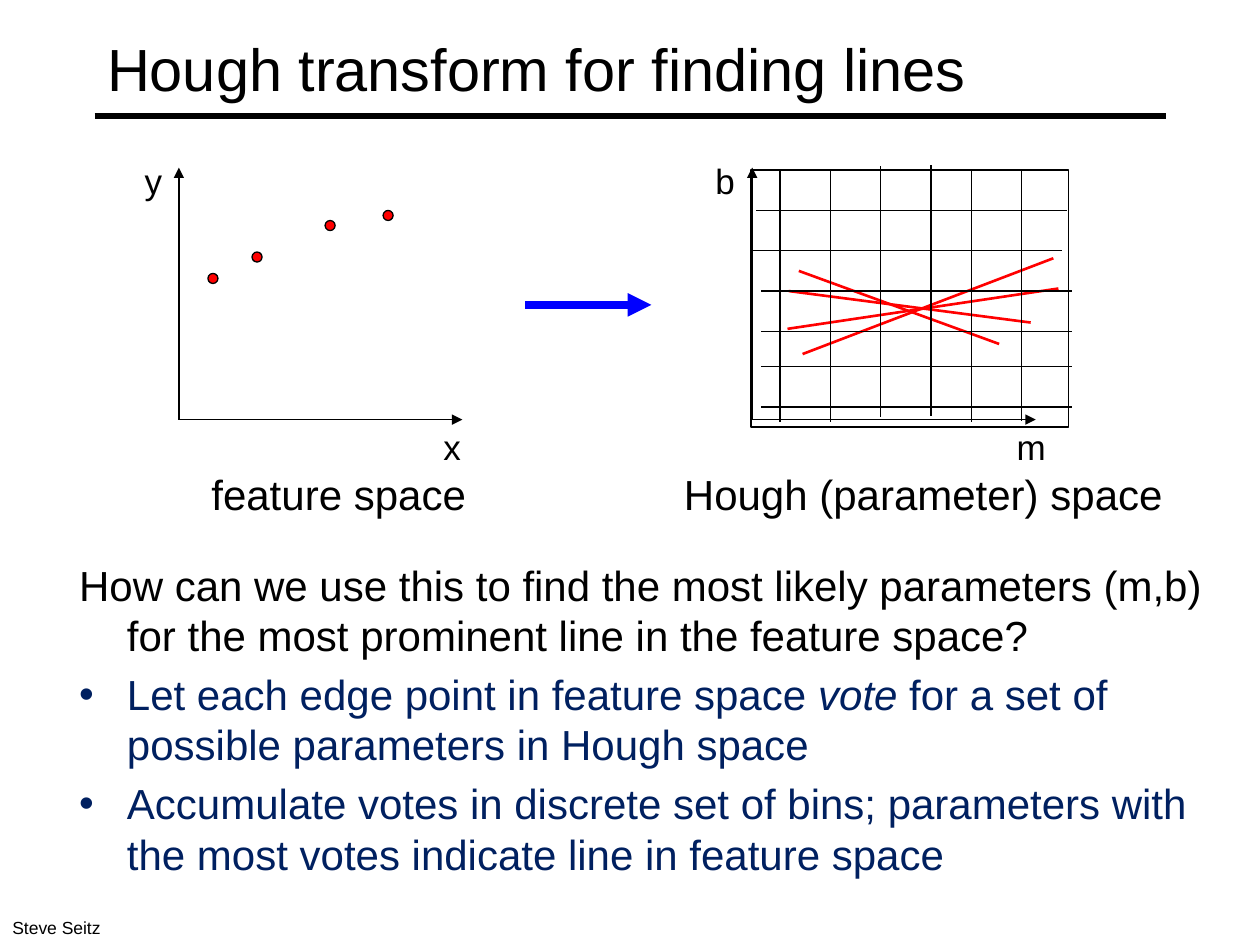
from lxml import etree
from pptx import Presentation
from pptx.dml.color import RGBColor
from pptx.enum import shapes, text
from pptx.oxml.ns import qn
from pptx.util import Inches, Pt

BLACK = RGBColor(0x00, 0x00, 0x00)
RED = RGBColor(0xFF, 0x00, 0x00)
BLUE = RGBColor(0x00, 0x00, 0xFF)
NAVY = RGBColor(0x00, 0x20, 0x60)
FONT = "Arial"

EDGE_POINTS = [(0.23, 0.84), (0.58, 0.67), (1.16, 0.42), (1.62, 0.34)]
VOTE_LINES = [
    (0.37, 0.82, 1.96, 1.4),
    (0.29, 0.98, 2.21, 1.23),
    (0.4, 1.48, 2.39, 0.72),
    (0.28, 1.28, 2.43, 0.96),
]
GRID_ROWS = [(0.04, 0.32), (0, 0.64), (0.08, 0.96), (0.08, 1.28), (0.08, 1.56), (0.08, 1.88)]
GRID_COLUMNS = [(0.23, 0.01), (0.63, 0.01), (1.03, -0.03), (1.43, -0.04), (1.75, 0.01), (2.15, 0)]
QUESTION = [
    [("How can we use this to find the most likely parameters (m,b) "
      "for the most prominent line in the feature space?", False)],
    [("Let each edge point in feature space ", False), ("vote ", True),
     ("for a set of possible parameters in Hough space", False)],
    [("Accumulate votes in discrete set of bins; parameters with "
      "the most votes indicate line in feature space", False)],
]


def style(font, size, color=BLACK):
    """Set the typeface, size and colour of a font."""
    font.name, font.size, font.color.rgb = FONT, Pt(size), color


def add_line(s, x1, y1, x2, y2, color=BLACK, width=0.75, arrow=False):
    """Draw a straight line, with an arrowhead at its end if asked."""
    cxn = s.shapes.add_connector(shapes.MSO_CONNECTOR.STRAIGHT,
                                 Inches(x1), Inches(y1), Inches(x2), Inches(y2))
    cxn.line.color.rgb, cxn.line.width = color, Pt(width)
    if arrow:
        etree.SubElement(cxn.line._get_or_add_ln(), qn("a:tailEnd"), type="triangle")
    etree.SubElement(cxn._element.spPr, qn("a:effectLst"))
    return cxn


def add_label(s, x, y, w, h, words, size, wrap=False):
    """Place a one-line label."""
    tf = s.shapes.add_textbox(Inches(x), Inches(y), Inches(w), Inches(h)).text_frame
    tf.word_wrap = wrap
    tf.auto_size = text.MSO_AUTO_SIZE.SHAPE_TO_FIT_TEXT
    tf.text = words
    style(tf.paragraphs[0].runs[0].font, size)


def add_title(s, x, y, w, h, words):
    """Place the slide title and the rule that runs through its foot."""
    add_line(s, x, 0.92, x + 8.5, 0.92, width=3)
    sp = s.shapes.title
    sp.left, sp.top, sp.width, sp.height = Inches(x), Inches(y), Inches(w), Inches(h)
    tf = sp.text_frame
    tf.text = words
    tf.auto_size = text.MSO_AUTO_SIZE.NONE
    tf.vertical_anchor = text.MSO_ANCHOR.MIDDLE
    p = tf.paragraphs[0]
    p.alignment = text.PP_ALIGN.LEFT
    style(p.runs[0].font, 34)


def add_axes(s, x, y, w, h, across, up, up_offset):
    """Draw a pair of labelled axes in the given box."""
    add_line(s, x, y + h, x, y, width=1, arrow=True)
    add_line(s, x, y + h, x + w, y + h, width=1, arrow=True)
    add_label(s, x + 2, y + h, 0.43 if across == "m" else 0.34, 0.43, across, 20)
    add_label(s, x - up_offset, y - 0.11, 0.35, 0.43, up, 20)


def add_feature_space(s, x, y, w, h):
    """Draw the feature space with its edge points."""
    add_axes(s, x, y, w, h, "x", "y", 0.37)
    add_label(s, x + 0.16, y + h + 0.34, 2.24, 0.5, "feature space", 24)
    for dx, dy in EDGE_POINTS:
        sp = s.shapes.add_shape(shapes.MSO_SHAPE.OVAL, Inches(x + dx), Inches(y + dy),
                                Inches(0.08), Inches(0.08))
        sp.shadow.inherit = False
        sp.fill.solid()
        sp.fill.fore_color.rgb = RED
        sp.line.color.rgb, sp.line.width = BLACK, Pt(0.75)


def add_hough_space(s, x, y, w, h):
    """Draw the Hough space with its vote lines and grid of bins."""
    add_axes(s, x, y, w, h, "m", "b", 0.39)
    add_label(s, x - 0.64, y + h + 0.34, 4.04, 0.51, "Hough (parameter) space", 24)
    for x1, y1, x2, y2 in VOTE_LINES:
        add_line(s, x + x1, y + y1, x + x2, y + y2, RED, 1.5)
    left, top = x - 0.01, y + 0.02
    sp = s.shapes.add_shape(shapes.MSO_SHAPE.RECTANGLE, Inches(left), Inches(top),
                            Inches(2.52), Inches(2.04))
    sp.shadow.inherit = False
    sp.fill.background()
    sp.line.color.rgb, sp.line.width = BLACK, Pt(0.75)
    for dx, dy in GRID_ROWS:
        add_line(s, left + dx, top + dy, left + dx + 2.47, top + dy)
    for dx, dy in GRID_COLUMNS:
        add_line(s, left + dx, top + dy, left + dx, top + dy + 1.99)


def add_question(s, x, y, w, h):
    """Place the question and its bulleted answers with hanging indents."""
    tf = s.shapes.add_textbox(Inches(x), Inches(y), Inches(w), Inches(h)).text_frame
    tf.word_wrap = True
    for i, runs in enumerate(QUESTION):
        p = tf.paragraphs[0] if i == 0 else tf.add_paragraph()
        pPr = p._p.get_or_add_pPr()
        pPr.set("marL", str(Inches(0.38)))
        pPr.set("indent", str(-Inches(0.38)))
        if i:
            p.space_before = Pt(4.8)
            etree.SubElement(pPr, qn("a:buFont"), typeface=FONT)
            etree.SubElement(pPr, qn("a:buChar"), char="•")
        for words, italic in runs:
            r = p.add_run()
            r.text = words
            style(r.font, 24, NAVY if i else BLACK)
            r.font.italic = italic


def main():
    """Build the slide and save it."""
    prs = Presentation()
    prs.slide_width, prs.slide_height = Inches(10), Inches(7.5)
    s = prs.slides.add_slide(prs.slide_layouts[5])
    add_title(s, 0.75, 0.08, 9.25, 0.92, "Hough transform for finding lines")
    add_question(s, 0.53, 4.39, 9.14, 2.08)
    add_feature_space(s, 1.42, 1.33, 2.25, 2)
    add_line(s, 4.17, 2.42, 5.17, 2.42, BLUE, 4.5, arrow=True)
    add_hough_space(s, 5.97, 1.33, 2.25, 2)
    add_label(s, 0, 7.23, 2, 0.27, "Steve Seitz", 10, wrap=True)
    prs.save("out.pptx")


if __name__ == "__main__":
    main()
